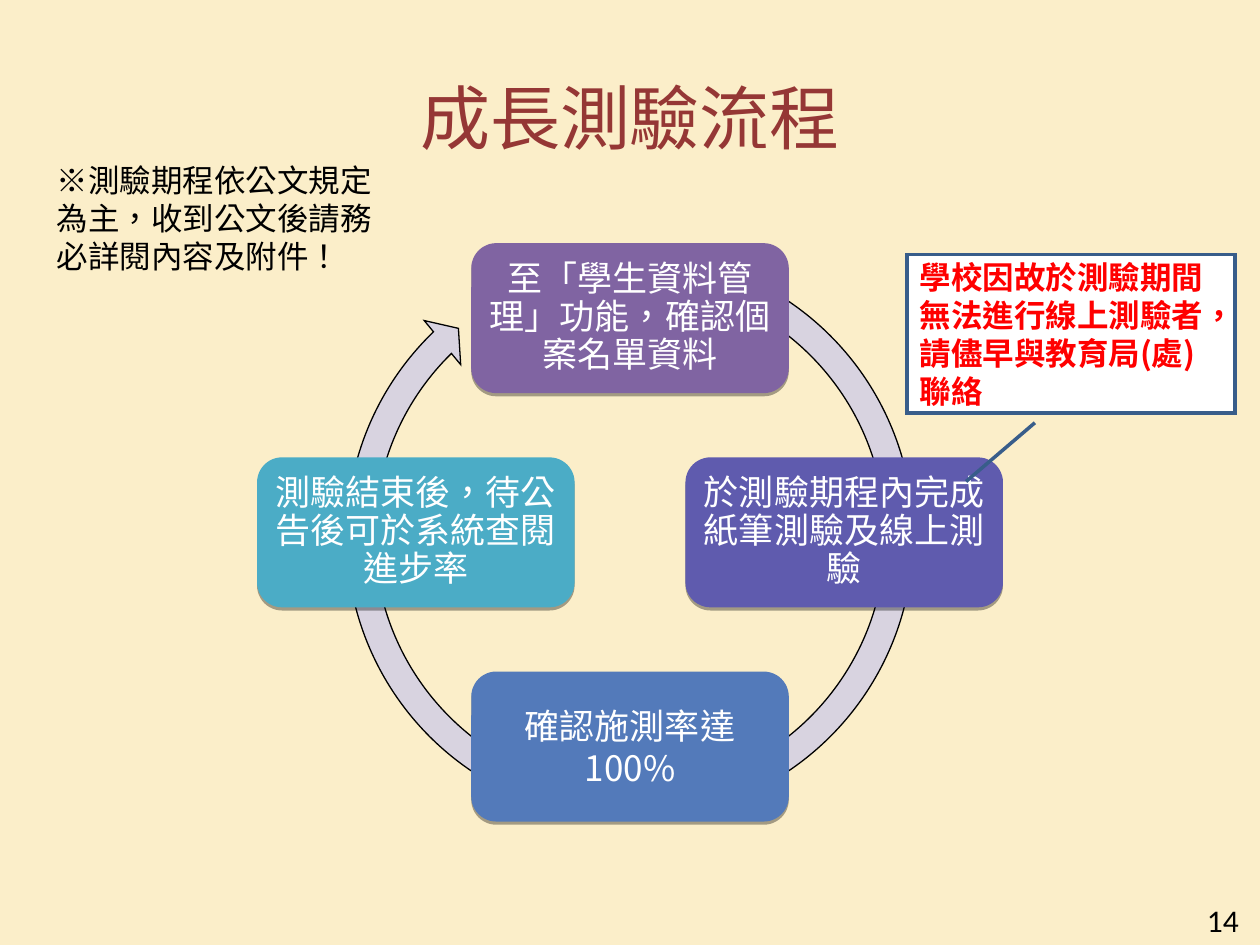
from lxml import etree
from pptx import Presentation
from pptx.dml.color import RGBColor
from pptx.enum.shapes import MSO_SHAPE
from pptx.enum.text import MSO_ANCHOR, MSO_AUTO_SIZE, PP_ALIGN
from pptx.oxml.ns import qn
from pptx.util import Inches, Pt

ROUNDED, CALLOUT = MSO_SHAPE.ROUNDED_RECTANGLE, MSO_SHAPE.LINE_CALLOUT_1
RING = MSO_SHAPE.CIRCULAR_ARROW
MIDDLE, TOP = MSO_ANCHOR.MIDDLE, MSO_ANCHOR.TOP
LEFT, CENTER, RIGHT = PP_ALIGN.LEFT, PP_ALIGN.CENTER, PP_ALIGN.RIGHT
GROW = MSO_AUTO_SIZE.SHAPE_TO_FIT_TEXT

WIDTH, HEIGHT = 10, 7.5
CJK = "Noto Sans CJK SC"
DEGREE = 0.6
COLORS = {
    "background": "FBEEC9", "title": "953735", "ring": "D8D3E0",
    "black": "000000", "white": "FFFFFF", "warning": "FF0000",
    "callout_line": "385D8A", "roster": "8064A2", "testing": "5F5BAE",
    "completion": "537ABA", "progress": "4BACC6",
}
STEPS = [
    ("至「學生資料管理」功能，確認個案名單資料", "roster", 0, -1, 0.9),
    ("於測驗期程內完成紙筆測驗及線上測驗", "testing", 1, 0, 0.9),
    ("確認施測率達100%", "completion", 0, 1, None),
    ("測驗結束後，待公告後可於系統查閱進步率", "progress", -1, 0, 0.9),
]


def color(name):
    return RGBColor.from_string(COLORS[name])


def inches(box):
    return [Inches(length) for length in box]


def paint(shape, fill, line=None, weight=1):
    shape.shadow.inherit = False
    shape.fill.solid()
    shape.fill.fore_color.rgb = color(fill)
    if line:
        shape.line.color.rgb = color(line)
        shape.line.width = Pt(weight)
        outline = shape._element.spPr.find(qn("a:ln"))
        etree.SubElement(outline, qn("a:miter"), lim="800000")
    else:
        shape.line.fill.background()


def adjust(shape, *values):
    for index, value in enumerate(values):
        shape.adjustments[index] = value


def write(shape, text, size, ink, align=LEFT, anchor=MIDDLE, font=CJK, bold=False):
    frame = shape.text_frame
    frame.word_wrap = True
    frame.vertical_anchor = anchor
    frame.text = text
    paragraph = frame.paragraphs[0]
    paragraph.alignment = align
    run = paragraph.runs[0]
    run.font.size = Pt(size)
    run.font.bold = bold
    run.font.color.rgb = color(ink)
    run.font.name = font
    properties = run.font._element
    properties.set("lang", "zh-TW")
    if font == CJK:
        etree.SubElement(properties, qn("a:ea"), typeface=font)
    return paragraph


def drop_shadow(shape):
    effects = shape._element.spPr.find(qn("a:effectLst"))
    shadow = etree.SubElement(effects, qn("a:outerShdw"), blurRad="0",
                              dist=str(Pt(1.8)), dir="5400000", rotWithShape="0")
    shade = etree.SubElement(shadow, qn("a:srgbClr"), val=COLORS["black"])
    etree.SubElement(shade, qn("a:alpha"), val="35000")


def add_title(slide, box):
    title = slide.shapes.title
    title.left, title.top, title.width, title.height = inches(box)
    write(title, "成長測驗流程", 40, "title", CENTER, font="Times New Roman")


def add_ring(slide, box):
    ring = slide.shapes.add_shape(RING, *inches(box))
    thickness, head_angle, end_angle, start_angle, head_width = 0.047, 4.55, 225.9, 292.6, 0.048
    adjust(ring, thickness, head_angle * DEGREE, end_angle * DEGREE,
           start_angle * DEGREE, head_width)
    paint(ring, "ring", "black", 0.75)


def add_step(slide, box, text, fill, spacing):
    step = slide.shapes.add_shape(ROUNDED, *inches(box))
    paint(step, fill)
    drop_shadow(step)
    frame = step.text_frame
    frame.margin_left = frame.margin_right = Inches(0.08)
    frame.margin_top = frame.margin_bottom = Inches(0.08)
    paragraph = write(step, text, 20, "white", CENTER)
    if spacing:
        paragraph.line_spacing = spacing
        paragraph.space_after = Pt(8)


def add_cycle(slide, box):
    left, top, size, _ = box
    add_ring(slide, box)
    width, height, reach = 2.52, 1.19, 1.7
    for text, fill, column, row, spacing in STEPS:
        place = (left + size / 2 + column * reach - width / 2,
                 top + size / 2 - 0.03 + row * reach - height / 2, width, height)
        add_step(slide, place, text, fill, spacing)


def add_schedule_note(slide, box):
    note = slide.shapes.add_textbox(*inches(box))
    write(note, "※測驗期程依公文規定為主，收到公文後請務必詳閱內容及附件！",
          18, "black", anchor=TOP)
    note.text_frame.auto_size = GROW


def add_contact_callout(slide, box):
    callout = slide.shapes.add_shape(CALLOUT, *inches(box))
    adjust(callout, 1.06, 0.39, 1.43, 0.18)
    paint(callout, "white", "callout_line", 2)
    write(callout, "學校因故於測驗期間無法進行線上測驗者，請儘早與教育局(處)聯絡",
          18, "warning", bold=True)


def add_page_number(slide, box):
    number = slide.shapes.add_textbox(*inches(box))
    write(number, "14", 18, "black", RIGHT, font="Calibri")


def main():
    deck = Presentation()
    deck.slide_width, deck.slide_height = Inches(WIDTH), Inches(HEIGHT)
    slide = deck.slides.add_slide(deck.slide_layouts[5])
    slide.background.fill.solid()
    slide.background.fill.fore_color.rgb = color("background")
    add_title(slide, (0.05 * WIDTH, 0.04 * HEIGHT, 0.9 * WIDTH, 1.25))
    cycle_size = 4.73
    add_cycle(slide, ((WIDTH - cycle_size) / 2, 1.89, cycle_size, cycle_size))
    add_schedule_note(slide, (0.35, 1.23, 2.91, 1.01))
    add_contact_callout(slide, (0.72 * WIDTH, 2.02, 0.26 * WIDTH, 1.26))
    add_page_number(slide, (0.76 * WIDTH, HEIGHT - 0.4, 2.33, 0.4))
    deck.save("out.pptx")


if __name__ == "__main__":
    main()
